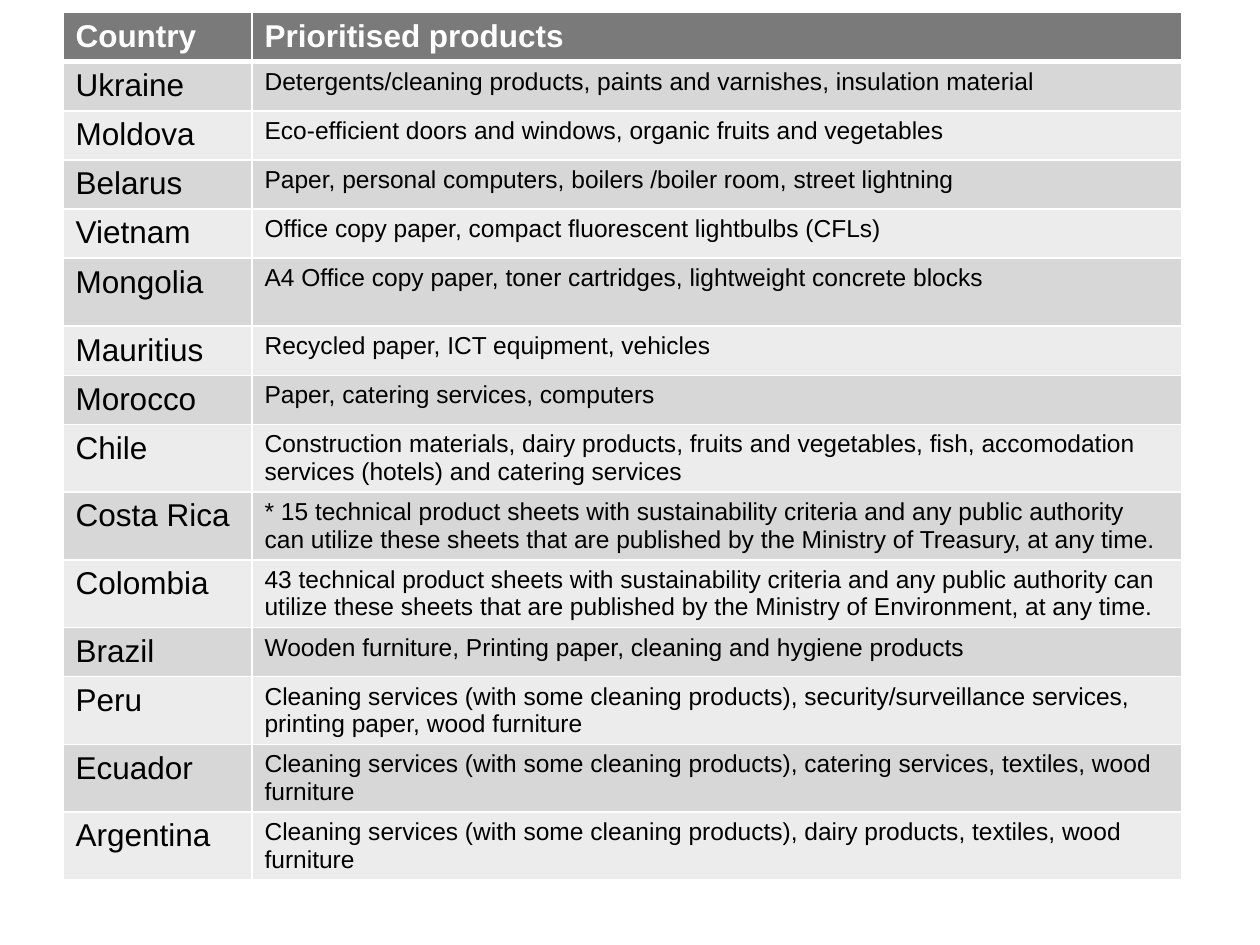
from lxml import etree
from pptx import Presentation
from pptx.dml.color import RGBColor
from pptx.oxml.ns import qn
from pptx.util import Inches, Pt

WHITE = RGBColor(0xFF, 0xFF, 0xFF)
BLACK = RGBColor(0x00, 0x00, 0x00)
HEADER_GREY = RGBColor(0x7A, 0x7A, 0x7A)
BAND_GREYS = (RGBColor(0xD7, 0xD7, 0xD7), RGBColor(0xEC, 0xEC, 0xEC))

BLANK_LAYOUT = 6
ROW_HEIGHT = 0.39
TALL_ROW_HEIGHT = 0.54
TALL_COUNTRY = "Mongolia"
COLUMN_WIDTHS = (1.5, 7.38)

HEADINGS = ("Country", "Prioritised products")
PRODUCTS = (
    ("Ukraine", "Detergents/cleaning products, paints and varnishes, insulation material"),
    ("Moldova", "Eco-efficient doors and windows, organic fruits and vegetables"),
    ("Belarus", "Paper, personal computers, boilers /boiler room, street lightning"),
    ("Vietnam", "Office copy paper, compact fluorescent lightbulbs (CFLs)"),
    ("Mongolia", "A4 Office copy paper, toner cartridges, lightweight concrete blocks"),
    ("Mauritius", "Recycled paper, ICT equipment, vehicles"),
    ("Morocco", "Paper, catering services, computers"),
    ("Chile", "Construction materials, dairy products, fruits and vegetables, fish, "
              "accomodation services (hotels) and catering services"),
    ("Costa Rica", "* 15 technical product sheets with sustainability criteria and any "
                   "public authority can utilize these sheets that are published by the "
                   "Ministry of Treasury, at any time."),
    ("Colombia", "43 technical product sheets with sustainability criteria and any "
                 "public authority can utilize these sheets that are published by the "
                 "Ministry of Environment, at any time."),
    ("Brazil", "Wooden furniture, Printing paper, cleaning and hygiene products"),
    ("Peru", "Cleaning services (with some cleaning products), "
             "security/surveillance services, printing paper, wood furniture"),
    ("Ecuador", "Cleaning services (with some cleaning products), catering services, "
                "textiles, wood furniture"),
    ("Argentina", "Cleaning services (with some cleaning products), dairy products, "
                  "textiles, wood furniture"),
)


class SlideBuilder:
    def __init__(self, s, font="Arial"):
        self.s = s
        self.font = font

    def table(self, left, top, widths, heights):
        frame = self.s.shapes.add_table(
            len(heights), len(widths), Inches(left), Inches(top),
            Inches(sum(widths)), Inches(sum(heights)))
        table = frame.table
        for column, width in zip(table.columns, widths):
            column.width = Inches(width)
        for row, height in zip(table.rows, heights):
            row.height = Inches(height)
        return table

    def cell(self, cell, text, size, fill, color=BLACK, bold=False, top=1, bottom=1):
        """Fill one cell; top and bottom are border widths in points."""
        self.borders(cell, lnL=1, lnR=1, lnT=top, lnB=bottom)
        cell.fill.solid()
        cell.fill.fore_color.rgb = fill
        cell.text = text
        font = cell.text_frame.paragraphs[0].font
        font.name = self.font
        font.size = Pt(size)
        font.bold = bold
        font.color.rgb = color

    def borders(self, cell, **widths):
        tcPr = cell._tc.get_or_add_tcPr()
        for side, width in widths.items():
            line = etree.SubElement(tcPr, qn(f"a:{side}"), w=str(Pt(width)))
            fill = etree.SubElement(line, qn("a:solidFill"))
            etree.SubElement(fill, qn("a:srgbClr"), val=str(WHITE))


def main():
    prs = Presentation()
    prs.slide_width, prs.slide_height = Inches(10), Inches(7.5)
    builder = SlideBuilder(prs.slides.add_slide(prs.slide_layouts[BLANK_LAYOUT]))

    heights = [ROW_HEIGHT] + [
        TALL_ROW_HEIGHT if country == TALL_COUNTRY else ROW_HEIGHT
        for country, _ in PRODUCTS]
    table = builder.table(0.5, 0.1, COLUMN_WIDTHS, heights)

    for col, heading in enumerate(HEADINGS):
        builder.cell(table.cell(0, col), heading, 18, HEADER_GREY,
                     color=WHITE, bold=True, bottom=3)
    for row, (country, products) in enumerate(PRODUCTS, start=1):
        fill = BAND_GREYS[(row - 1) % 2]
        top = 3 if row == 1 else 1
        builder.cell(table.cell(row, 0), country, 18, fill, top=top)
        builder.cell(table.cell(row, 1), products, 14, fill, top=top)

    prs.save("out.pptx")


if __name__ == "__main__":
    main()
